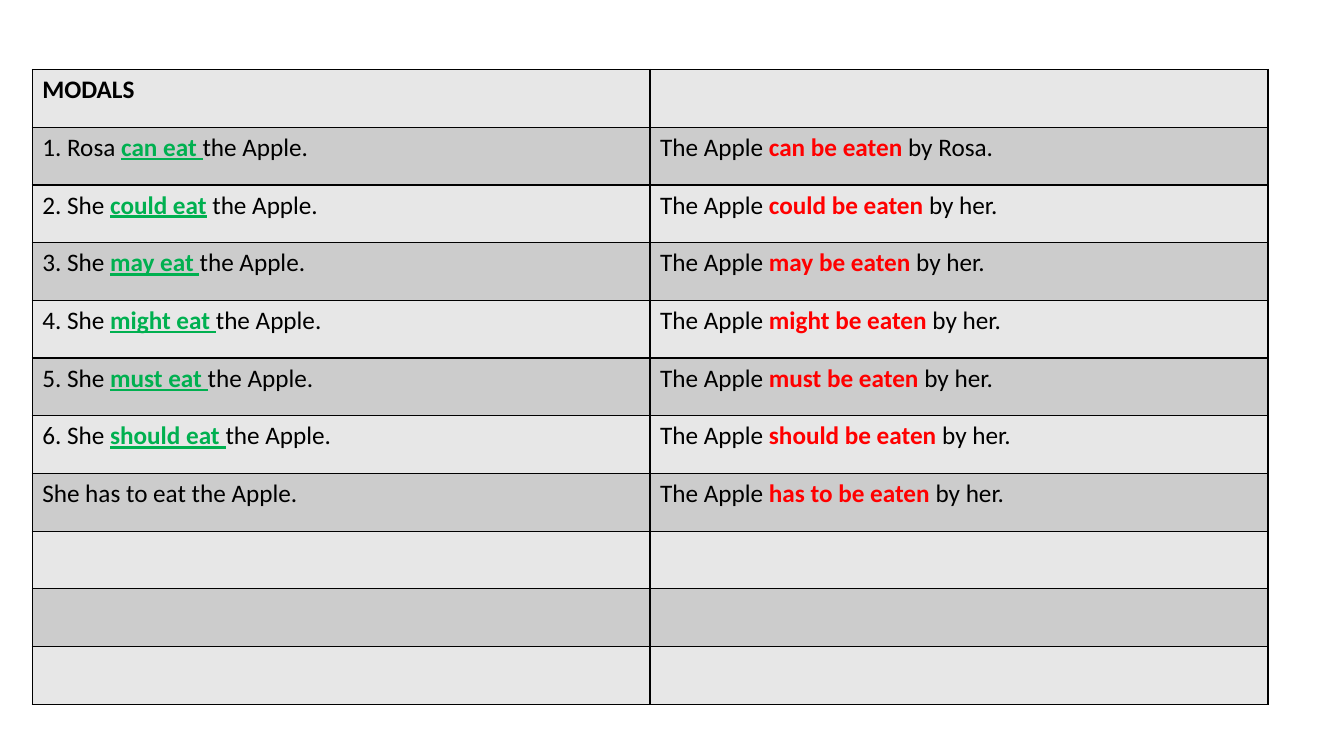
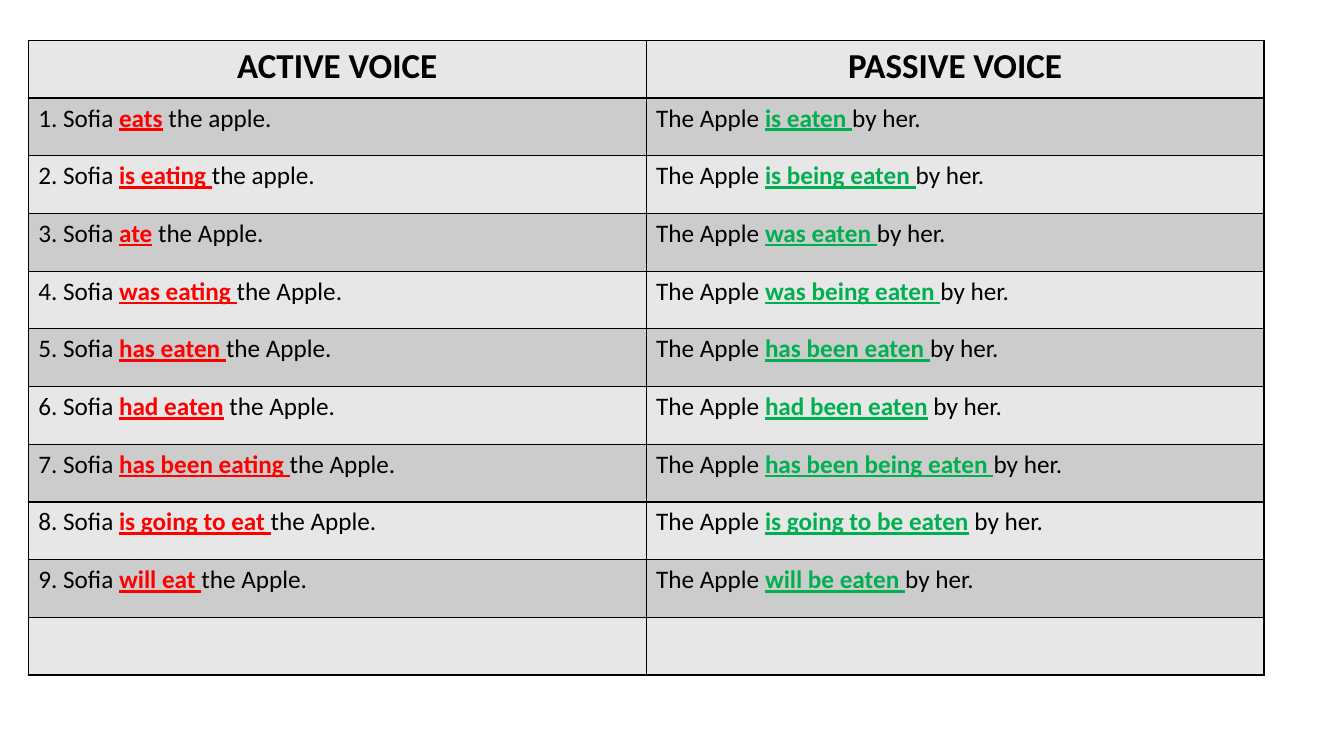
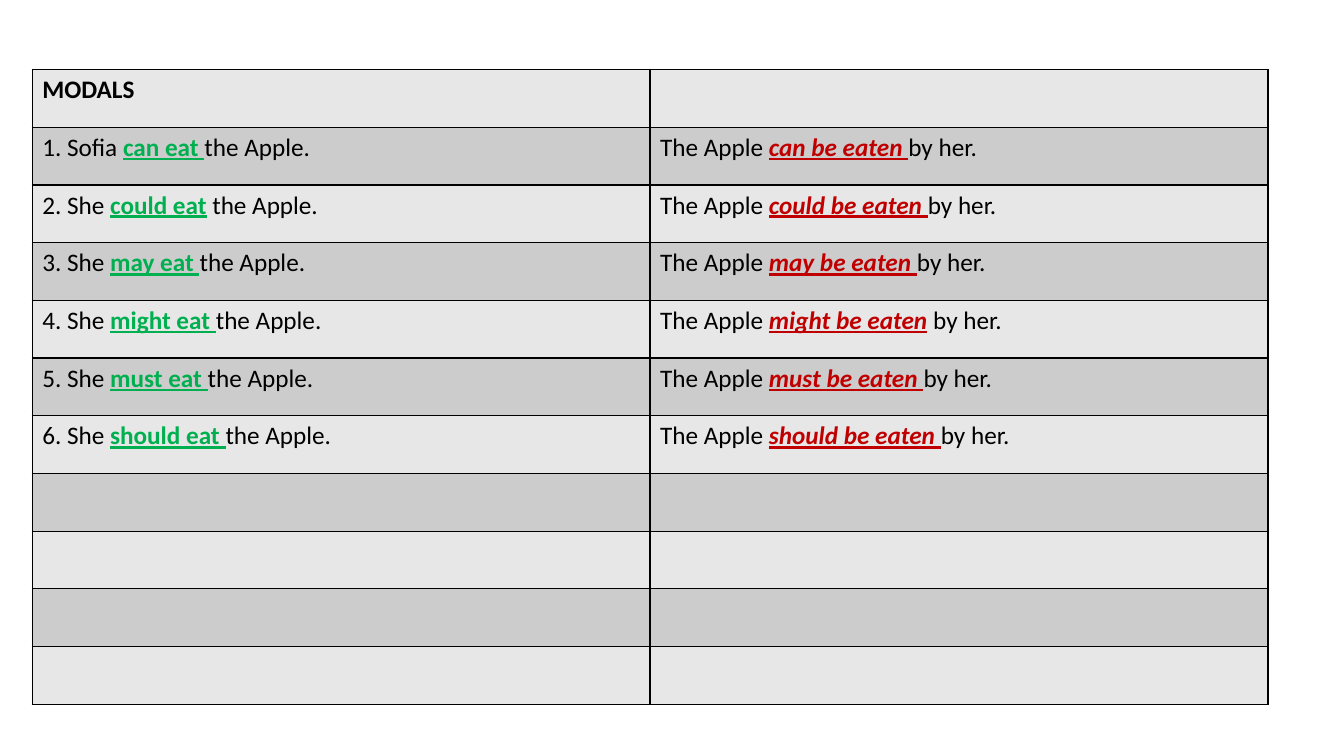
"""Build three grammar slides on active and passive voice, each with one table."""
from dataclasses import dataclass

from lxml.etree import SubElement
from pptx import Presentation
from pptx.dml.color import RGBColor
from pptx.enum.text import PP_ALIGN as Align
from pptx.oxml.ns import qn
from pptx.util import Pt


@dataclass(frozen=True)
class Theme:
    font: str = "Calibri"
    body_size: float = 18
    heading_size: float = 25
    text: str = "000000"
    border: str = "000000"
    green: str = "00B050"
    red: str = "FF0000"
    dark_red: str = "C00000"
    bands: tuple = ("E7E7E7", "CCCCCC")
    border_width: float = 1
    column_width: float = 441.36
    row_height: float = 41.24
    row_count: int = 11


@dataclass(frozen=True)
class Emphasis:
    color: str
    underline: bool = True
    italic: bool = False


THEME = Theme()
GREEN = Emphasis(THEME.green)
RED = Emphasis(THEME.red)
PLAIN_RED = Emphasis(THEME.red, underline=False)
ITALIC_RED = Emphasis(THEME.dark_red, italic=True)

MODALS_HEADING = ("MODALS", "")
MODALS_POSITION = (23, 49.68)
VOICE_HEADING = ("ACTIVE VOICE", "PASSIVE VOICE")
VOICE_POSITION = (20.16, 28.8)

# Asterisks enclose the emphasised verb phrase.
SHARED_MODALS = [
    ("2. She *could eat* the Apple.", "The Apple *could be eaten *by her."),
    ("3. She *may eat *the Apple.", "The Apple *may be eaten *by her."),
    ("4. She *might eat *the Apple.", "The Apple *might be eaten* by her."),
    ("5. She *must eat *the Apple.", "The Apple *must be eaten *by her."),
    ("6. She *should eat *the Apple.", "The Apple *should be eaten *by her."),
]
ROSA_MODALS = [
    ("1. Rosa *can eat *the Apple.", "The Apple *can be eaten *by Rosa."),
    *SHARED_MODALS,
    ("She has to eat the Apple.", "The Apple *has to be eaten *by her."),
]
SOFIA_MODALS = [
    ("1. Sofia *can eat *the Apple.", "The Apple *can be eaten *by her."),
    *SHARED_MODALS,
]
VOICES = [
    ("1. Sofia *eats* the apple.", "The Apple *is eaten *by her."),
    ("2. Sofia *is eating *the apple.", "The Apple *is being eaten *by her."),
    ("3. Sofia *ate* the Apple.", "The Apple *was eaten *by her."),
    ("4. Sofia *was eating *the Apple.", "The Apple *was being eaten *by her."),
    ("5. Sofia *has eaten *the Apple.", "The Apple *has been eaten *by her."),
    ("6. Sofia *had eaten* the Apple.", "The Apple *had been eaten* by her."),
    ("7. Sofia *has been eating *the Apple.", "The Apple *has been being eaten *by her."),
    ("8. Sofia *is going to eat *the Apple.", "The Apple *is going to be eaten* by her."),
    ("9. Sofia *will eat *the Apple.", "The Apple *will be eaten *by her."),
]


def style_run(run, size, color=THEME.text, bold=False):
    """Give a run the shared font with its size, colour and weight."""
    run.font.name = THEME.font
    run.font.size = Pt(size)
    run.font.bold = bold
    run.font.color.rgb = RGBColor.from_string(color)


def style_cell(cell, band):
    """Draw a cell's four borders and fill it with its band colour."""
    properties = cell._tc.get_or_add_tcPr()
    for side in ("a:lnL", "a:lnR", "a:lnT", "a:lnB"):
        line = SubElement(properties, qn(side), w=str(Pt(THEME.border_width)))
        fill = SubElement(line, qn("a:solidFill"))
        SubElement(fill, qn("a:srgbClr"), val=THEME.border)
    cell.fill.solid()
    cell.fill.fore_color.rgb = RGBColor.from_string(band)


def write_heading(cell, text, size, alignment):
    """Write a bold heading in a cell."""
    paragraph = cell.text_frame.paragraphs[0]
    paragraph.text = text
    paragraph.alignment = alignment
    for run in paragraph.runs:
        style_run(run, size, bold=True)


def write_sentence(cell, sentence, emphasis):
    """Write a sentence, emphasising the phrase between asterisks."""
    paragraph = cell.text_frame.paragraphs[0]
    for index, part in enumerate(sentence.split("*")):
        run = paragraph.add_run()
        run.text = part
        if index % 2:
            style_run(run, THEME.body_size, emphasis.color, bold=True)
            run.font.underline = emphasis.underline
            run.font.italic = emphasis.italic
        else:
            style_run(run, THEME.body_size)


def add_sentence_slide(presentation, position, heading, sentences, emphases,
                       heading_size=THEME.body_size, alignment=Align.LEFT):
    """Add a slide with a banded two-column table of sentences."""
    slide = presentation.slides.add_slide(presentation.slide_layouts[6])
    left, top = position
    columns = len(heading)
    table = slide.shapes.add_table(
        THEME.row_count, columns, Pt(left), Pt(top),
        Pt(columns * THEME.column_width), Pt(THEME.row_count * THEME.row_height)).table
    for column in table.columns:
        column.width = Pt(THEME.column_width)
    for index, row in enumerate(table.rows):
        row.height = Pt(THEME.row_height)
        for cell in row.cells:
            style_cell(cell, THEME.bands[index % 2])
    for column, text in enumerate(heading):
        if text:
            write_heading(table.cell(0, column), text, heading_size, alignment)
    for row, pair in enumerate(sentences, start=1):
        for column, (sentence, emphasis) in enumerate(zip(pair, emphases)):
            write_sentence(table.cell(row, column), sentence, emphasis)


def main():
    """Build and save the presentation."""
    presentation = Presentation()
    presentation.slide_width = Pt(960)
    presentation.slide_height = Pt(540)
    add_sentence_slide(presentation, MODALS_POSITION, MODALS_HEADING,
                       ROSA_MODALS, (GREEN, PLAIN_RED))
    add_sentence_slide(presentation, VOICE_POSITION, VOICE_HEADING,
                       VOICES, (RED, GREEN), THEME.heading_size, Align.CENTER)
    add_sentence_slide(presentation, MODALS_POSITION, MODALS_HEADING,
                       SOFIA_MODALS, (GREEN, ITALIC_RED))
    presentation.save("out.pptx")


if __name__ == "__main__":
    main()
